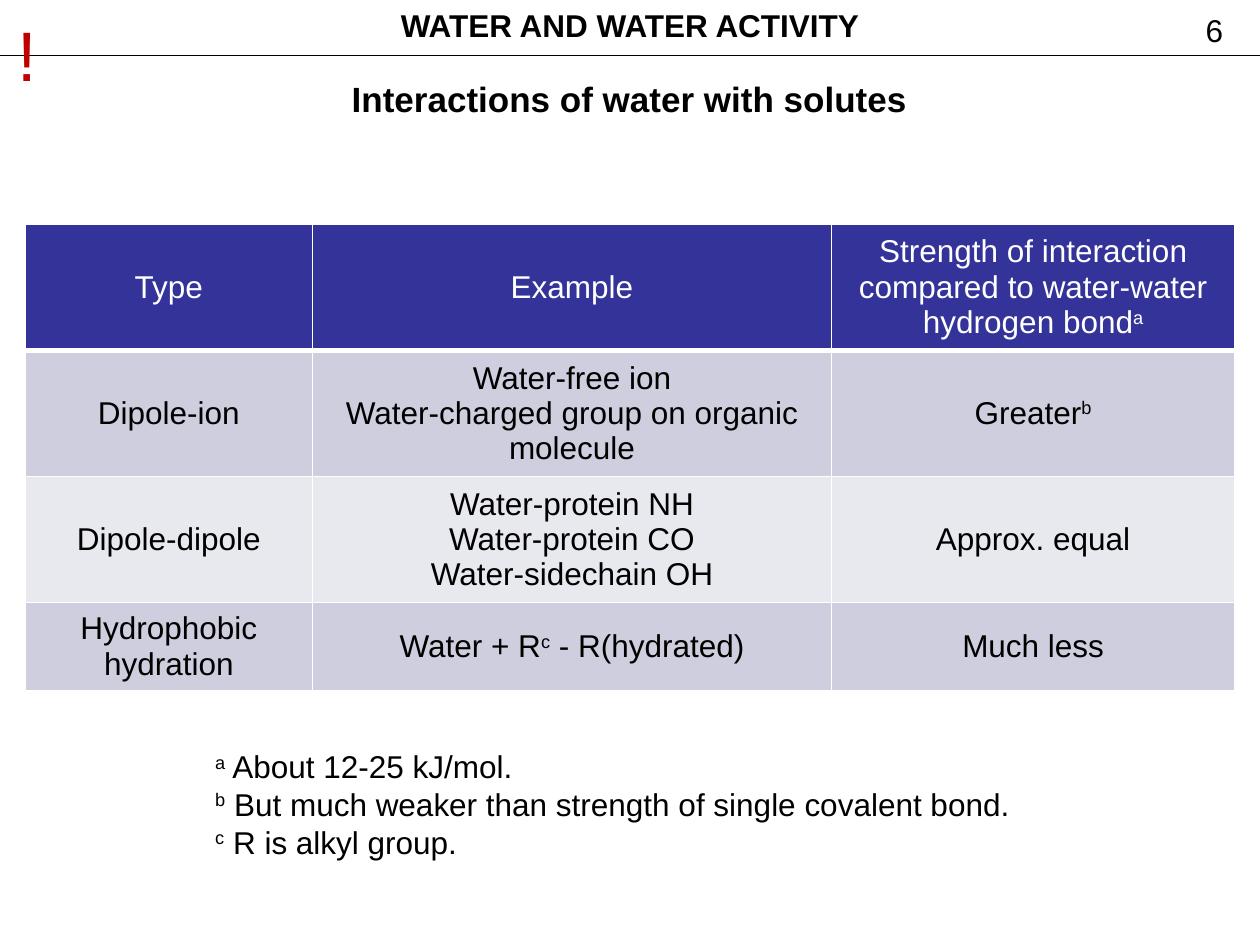
from pptx import Presentation
from pptx.dml.color import RGBColor
from pptx.enum.shapes import MSO_CONNECTOR
from pptx.enum.text import MSO_ANCHOR, MSO_AUTO_SIZE, PP_ALIGN
from pptx.oxml import parse_xml
from pptx.oxml.ns import nsdecls
from pptx.util import Inches, Pt

BLACK, WHITE, RED = "000000", "FFFFFF", "C00000"
HEADER_FILL = "333399"
BAND_FILLS = ["CECEDE", "E8E8EF"]

COL_WIDTHS = [2.28, 4.12, 3.2]
ROW_HEIGHTS = [1, 1, 1, 0.7]
# Text between ^ marks is superscript.
ROWS = [
    ["Type", "Example",
     "Strength of interaction compared to water-water hydrogen bond^a^"],
    ["Dipole-ion",
     "Water-free ion\nWater-charged group on organic\nmolecule",
     "Greater^b^"],
    ["Dipole-dipole",
     "Water-protein NH\nWater-protein CO\nWater-sidechain OH",
     "Approx. equal"],
    ["Hydrophobic hydration", "Water + R^c^ - R(hydrated)", "Much less"],
]
FOOTNOTES = """^a^ About 12-25 kJ/mol.
^b^ But much weaker than strength of single covalent bond.
^c^ R is alkyl group."""


def rgb(color):
    return RGBColor.from_string(color)


def write(tf, text, size=18, color=BLACK, bold=False, align=PP_ALIGN.LEFT):
    """Fill a text frame, one paragraph a line, with ^superscript^ runs."""
    for i, line in enumerate(text.split("\n")):
        p = tf.paragraphs[0] if i == 0 else tf.add_paragraph()
        p.alignment = align
        for j, piece in enumerate(line.split("^")):
            if not piece:
                continue
            r = p.add_run()
            r.text = piece
            r.font.name = "Arial"
            r.font.size = Pt(size)
            r.font.bold = bold
            r.font.color.rgb = rgb(color)
            if j % 2:
                r._r.get_or_add_rPr().set("baseline", "30000")


def add_text(s, box, text, wrap=False, **style):
    tf = s.shapes.add_textbox(*map(Inches, box)).text_frame
    tf.word_wrap = wrap
    write(tf, text, **style)
    return tf


def add_title(s, box, text):
    sp = s.shapes.title
    sp.left, sp.top, sp.width, sp.height = map(Inches, box)
    tf = sp.text_frame
    tf.word_wrap = False
    tf.auto_size = MSO_AUTO_SIZE.NONE
    tf.vertical_anchor = MSO_ANCHOR.MIDDLE
    write(tf, text, size=20, bold=True, align=PP_ALIGN.CENTER)


def add_header(s, left, top, width):
    y = Inches(top + 0.44)
    rule = s.shapes.add_connector(
        MSO_CONNECTOR.STRAIGHT, Inches(left), y, Inches(left + width), y)
    rule.line.color.rgb = rgb(BLACK)
    rule.line.width = Pt(0.75)
    rule._element.spPr.append(parse_xml(f"<a:effectLst {nsdecls('a')}/>"))
    add_text(s, (left + 9.47, top + 0.04, 0.34, 0.4), "6")
    tf = add_text(s, (left + 3.06, top, 3.88, 0.4), "WATER AND WATER ACTIVITY",
                  bold=True, align=PP_ALIGN.CENTER)
    tf.vertical_anchor = MSO_ANCHOR.MIDDLE


def set_borders(cell, top, bottom):
    tcPr = cell._tc.get_or_add_tcPr()
    for side, width in (("L", 1), ("R", 1), ("T", top), ("B", bottom)):
        tcPr.append(parse_xml(
            f'<a:ln{side} {nsdecls("a")} w="{Pt(width)}"><a:solidFill>'
            f'<a:srgbClr val="{WHITE}"/></a:solidFill></a:ln{side}>'))


def add_interactions_table(s, left, top):
    size = sum(COL_WIDTHS), sum(ROW_HEIGHTS)
    table = s.shapes.add_table(
        len(ROWS), len(COL_WIDTHS), *map(Inches, (left, top, *size))).table
    table.first_row = table.horz_banding = False
    for col, width in zip(table.columns, COL_WIDTHS):
        col.width = Inches(width)
    for i, texts in enumerate(ROWS):
        table.rows[i].height = Inches(ROW_HEIGHTS[i])
        for j, text in enumerate(texts):
            cell = table.cell(i, j)
            cell.vertical_anchor = MSO_ANCHOR.MIDDLE
            set_borders(cell, 3 if i == 1 else 1, 3 if i == 0 else 1)
            cell.fill.solid()
            cell.fill.fore_color.rgb = rgb(
                BAND_FILLS[(i - 1) % 2] if i else HEADER_FILL)
            write(cell.text_frame, text, color=BLACK if i else WHITE,
                  align=PP_ALIGN.CENTER)


def main():
    prs = Presentation()
    prs.slide_width, prs.slide_height = Inches(10), Inches(7.5)
    s = prs.slides.add_slide(prs.slide_layouts[5])
    add_header(s, 0, 0, 10)
    add_title(s, (2.6, 0.56, 4.79, 0.44), "Interactions of water with solutes")
    add_interactions_table(s, 0.2, 1.78)
    add_text(s, (1.61, 5.88, 6.77, 1.01), FOOTNOTES, wrap=True)
    add_text(s, (0.04, 0.04, 0.36, 0.77), "!", size=40, color=RED)
    prs.save("out.pptx")


if __name__ == "__main__":
    main()
